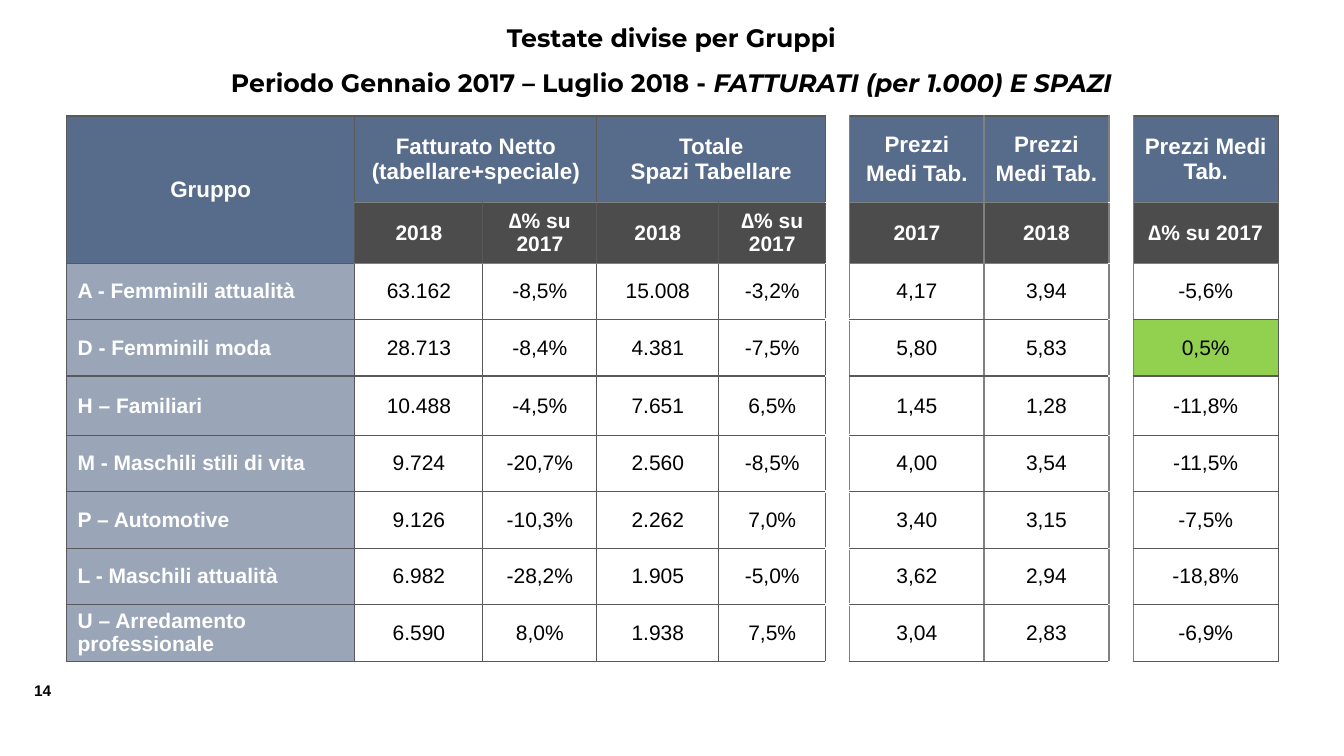
from dataclasses import dataclass

from lxml import etree
from pptx import Presentation
from pptx.dml.color import RGBColor
from pptx.enum.text import MSO_ANCHOR, PP_ALIGN
from pptx.oxml.ns import qn
from pptx.util import Emu, Pt

LEFT, CENTER = PP_ALIGN.LEFT, PP_ALIGN.CENTER
MIDDLE = MSO_ANCHOR.MIDDLE
SCALE = 9144  # EMU in one px, 100 px to the inch
WHITE, BLACK, BLUE, GREEN = "FFFFFF", "000000", "576B8A", "92D050"
DARK, GREY = "595959", "808080"

COLS = [286, 127, 113, 121, 106, 24, 133, 124, 24, 144]
ROWS = [86, 60, 56, 56, 59, 56, 56, 56, 56]
GAPS = (5, 8)
DELTA = "∆% su 2017"
PRICES = "Prezzi\nMedi Tab."
HEADS = {
    0: "Gruppo",
    1: "Fatturato Netto (tabellare+speciale)",
    3: "Totale\nSpazi Tabellare",
    6: PRICES,
    7: PRICES,
    9: "Prezzi Medi Tab.",
}
YEARS = ["", "2018", DELTA, "2018", DELTA, "", "2017", "2018", "", DELTA]
GROUPS = [
    ["A - Femminili attualità", "63.162", "-8,5%", "15.008", "-3,2%", "", "4,17", "3,94", "", "-5,6%"],
    ["D - Femminili moda", "28.713", "-8,4%", "4.381", "-7,5%", "", "5,80", "5,83", "", "0,5%"],
    ["H – Familiari", "10.488", "-4,5%", "7.651", "6,5%", "", "1,45", "1,28", "", "-11,8%"],
    ["M - Maschili stili di vita", "9.724", "-20,7%", "2.560", "-8,5%", "", "4,00", "3,54", "", "-11,5%"],
    ["P – Automotive", "9.126", "-10,3%", "2.262", "7,0%", "", "3,40", "3,15", "", "-7,5%"],
    ["L - Maschili attualità", "6.982", "-28,2%", "1.905", "-5,0%", "", "3,62", "2,94", "", "-18,8%"],
    ["U – Arredamento\vprofessionale", "6.590", "8,0%", "1.938", "7,5%", "", "3,04", "2,83", "", "-6,9%"],
]


@dataclass(frozen=True)
class Style:
    fill: str | None
    alpha: int = 100
    size: int = 15
    bold: bool = True
    color: str = WHITE
    align: PP_ALIGN = CENTER
    inset: tuple[int, int] = (10, 5)


HEAD = Style(BLUE, size=16)
YEAR = Style(BLACK, alpha=70)
NAME = Style(BLUE, alpha=60, align=LEFT, inset=(11, 0))
VALUE = Style(None, bold=False, color=BLACK, inset=(0, 0))
RISE = Style(GREEN, bold=False, color=BLACK, inset=(0, 0))
GAP = Style(WHITE)


def px(num: int) -> Emu:
    return Emu(num * SCALE)


def rgb(code: str) -> RGBColor:
    return RGBColor.from_string(code)


def pick(row: int, col: int, text: str) -> Style:
    """Choose the style of a cell from its place and value."""
    if col in GAPS:
        return GAP
    if row == 0 or (row == 1 and col == 0):
        return HEAD
    if row == 1:
        return YEAR
    if col == 0:
        return NAME
    return RISE if col == 9 and not text.startswith("-") else VALUE


def upright(line: int) -> tuple[str, float]:
    """Colour and width of the vertical rule left of column `line`."""
    return (GREY if 6 <= line <= 9 else DARK), 1


def level(line: int, col: int) -> tuple[str, float]:
    """Colour and width of the horizontal rule above row `line`."""
    if col in GAPS:
        return WHITE, 2.25 if col == GAPS[0] and 3 <= line <= 8 else 1
    return (GREY if line in (1, 2) and col else DARK), 1


def border(cell, row: int, col: int) -> None:
    props = cell._tc.get_or_add_tcPr()
    sides = {
        "L": upright(col),
        "R": upright(col + 1),
        "T": level(row, col),
        "B": level(row + 1, col),
    }
    for side, (color, width) in sides.items():
        line = etree.SubElement(props, qn(f"a:ln{side}"), w=str(Pt(width)))
        solid = etree.SubElement(line, qn("a:solidFill"))
        etree.SubElement(solid, qn("a:srgbClr"), val=color)


def paint(cell, style: Style) -> None:
    if style.fill is None:
        cell.fill.background()
        return
    cell.fill.solid()
    cell.fill.fore_color.rgb = rgb(style.fill)
    if style.alpha < 100:
        tint = next(cell._tc.tcPr.find(qn("a:solidFill")).iterchildren())
        etree.SubElement(tint, qn("a:alpha"), val=str(style.alpha * 1000))


def write(cell, text: str, style: Style) -> None:
    side, edge = style.inset
    cell.margin_left = cell.margin_right = px(side)
    cell.margin_top = cell.margin_bottom = px(edge)
    cell.vertical_anchor = MIDDLE
    cell.text_frame.text = text
    for num, para in enumerate(cell.text_frame.paragraphs):
        para.alignment = style.align
        if num and text == PRICES:
            para.space_before = Pt(3)
        para.font.name = "Arial"
        para.font.size = Pt(style.size)
        para.font.bold = style.bold
        para.font.color.rgb = rgb(style.color)


def draw_table(slide) -> None:
    frame = slide.shapes.add_table(
        len(ROWS), len(COLS), px(66), px(115), px(sum(COLS)), px(sum(ROWS))
    )
    table = frame.table
    table.first_row = table.horz_banding = False
    for col, width in enumerate(COLS):
        table.columns[col].width = px(width)
    for row, height in enumerate(ROWS):
        table.rows[row].height = px(height)
    for start, end in (((0, 0), (1, 0)), ((0, 1), (0, 2)), ((0, 3), (0, 4))):
        table.cell(*start).merge(table.cell(*end))
    heads = [HEADS.get(col, "") for col in range(len(COLS))]
    for row, texts in enumerate([heads, YEARS, *GROUPS]):
        for col, text in enumerate(texts):
            cell, style = table.cell(row, col), pick(row, col, text)
            border(cell, row, col)
            paint(cell, style)
            if text:
                write(cell, text, style)


def draw_title(slide) -> None:
    frame = slide.shapes.add_textbox(px(111), px(2), px(1110), px(107)).text_frame
    frame.word_wrap = True
    frame.text = "Testate divise per Gruppi\nPeriodo Gennaio 2017 – Luglio 2018 - "
    for para in frame.paragraphs:
        para.alignment = CENTER
        para.line_spacing = 1.5
        para.font.name = "Montserrat"
        para.font.size = Pt(18)
        para.font.bold = True
        para.font.color.rgb = rgb(BLACK)
    topic = frame.paragraphs[1].add_run()
    topic.text = "FATTURATI (per 1.000) E SPAZI"
    topic.font.italic = True


def draw_number(slide) -> None:
    frame = slide.shapes.add_textbox(px(24), px(671), px(42), px(29)).text_frame
    frame.text = "14"
    font = frame.paragraphs[0].font
    font.name, font.size, font.bold = "Arial", Pt(11), True
    font.color.rgb = rgb(BLACK)


def main() -> None:
    deck = Presentation()
    deck.slide_width, deck.slide_height = px(1333), px(750)
    slide = deck.slides.add_slide(deck.slide_layouts[6])
    draw_number(slide)
    draw_title(slide)
    draw_table(slide)
    deck.save("out.pptx")


if __name__ == "__main__":
    main()
